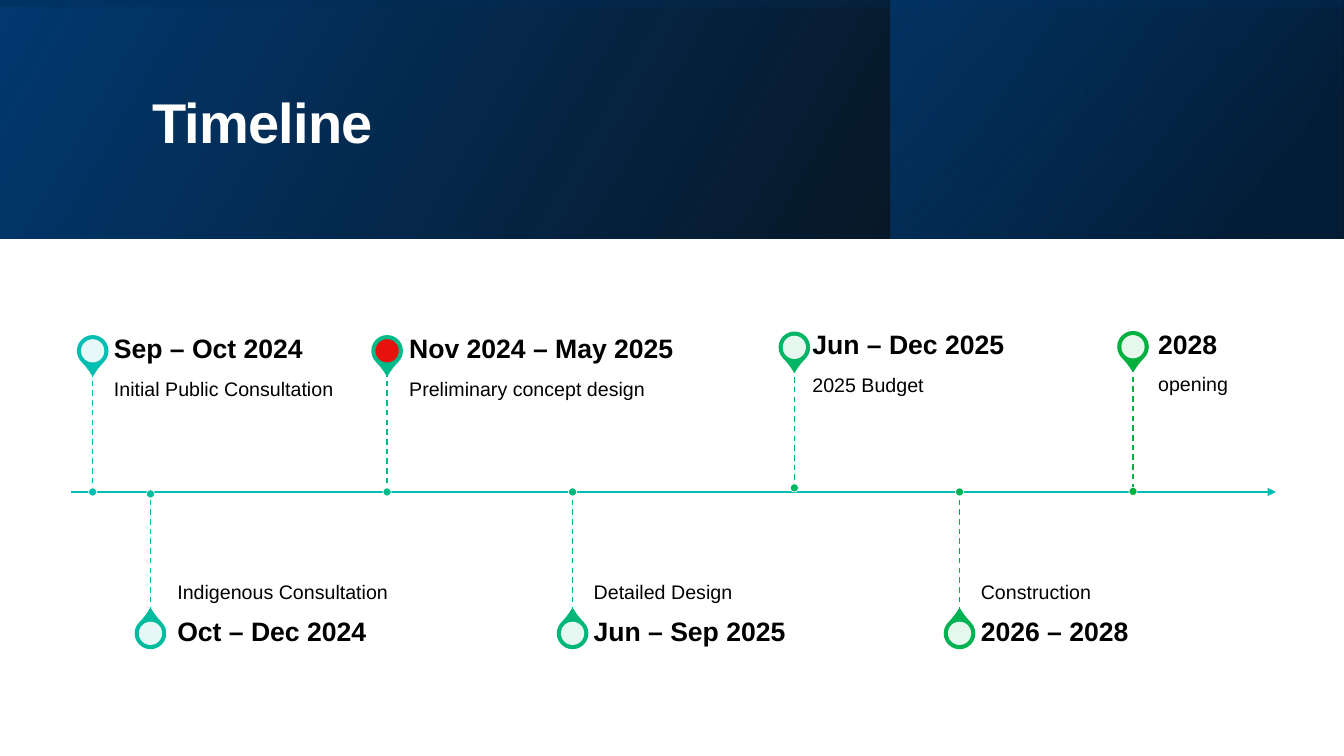
from lxml import etree
from pptx import Presentation
from pptx.dml.color import RGBColor
from pptx.enum.dml import MSO_LINE
from pptx.enum.shapes import MSO_CONNECTOR, MSO_SHAPE
from pptx.enum.text import MSO_ANCHOR
from pptx.oxml import parse_xml
from pptx.oxml.ns import nsdecls, qn
from pptx.util import Pt

WHITE = RGBColor(0xFF, 0xFF, 0xFF)
BLACK = RGBColor(0x00, 0x00, 0x00)
RED = RGBColor(0xFF, 0x00, 0x00)
NAVY = RGBColor(0x00, 0x39, 0x70)
DEEP_NAVY = RGBColor(0x00, 0x26, 0x4B)
MID_BLUE = RGBColor(0x00, 0x4C, 0x96)
TEAL = RGBColor(0x00, 0xBE, 0xB2)
SEA = RGBColor(0x00, 0xBC, 0x9E)
JADE = RGBColor(0x00, 0xBA, 0x8A)
MINT = RGBColor(0x00, 0xB7, 0x77)
EMERALD = RGBColor(0x00, 0xB5, 0x64)
LEAF = RGBColor(0x00, 0xB3, 0x52)
GREEN = RGBColor(0x00, 0xB1, 0x40)

SLIDE_W, SLIDE_H, HEADER_H = 960, 540, 170.6
AXIS_Y = 351.4
PIN, HOLE, DOT = 21.6, 16.6, 5.8
DATE_H, NOTE_H = 30.2, 86

# date, note, stem x, text x, text width, colour, hole, label shift, foot shift
ABOVE = [
    ("Sep – Oct 2024", "Initial Public Consultation", 66.2, 81.4, 172, TEAL, WHITE, 0, 0),
    ("Nov 2024 – May 2025", "Preliminary concept design", 276.5, 292.3, 240, JADE, RED, 0, 0),
    ("Jun – Dec 2025", "2025 Budget", 567.4, 580.3, 172, EMERALD, WHITE, -2.5, -2.9),
    ("2028", "opening", 809.3, 827.3, 66.2, GREEN, WHITE, -2.9, -0.4),
]
BELOW = [
    ("Oct – Dec 2024", "Indigenous Consultation", 107.5, 126.7, 172, SEA, WHITE, 0, 1.4),
    ("Jun – Sep 2025", "Detailed Design", 409, 424.1, 172, MINT, WHITE, 0, 0),
    ("2026 – 2028", "Construction", 685.4, 700.6, 172, LEAF, WHITE, 0, 0),
]


class TimelineSlide:
    font = "Arial"

    def __init__(self, slide):
        self.slide = slide
        self.shapes = slide.shapes

    def start_group(self):
        self.shapes = self.slide.shapes.add_group_shape().shapes

    def shape(self, kind, x, y, w, h, fill=None, line=None, line_w=1, alpha=None):
        sp = self.shapes.add_shape(kind, Pt(x), Pt(y), Pt(w), Pt(h))
        sp.shadow.inherit = False
        if fill is None:
            sp.fill.background()
        else:
            sp.fill.solid()
            sp.fill.fore_color.rgb = fill
        if alpha is not None:
            color = sp._element.spPr.find(".//" + qn("a:srgbClr"))
            etree.SubElement(color, qn("a:alpha")).set("val", str(alpha * 1000))
        if line is None:
            sp.line.fill.background()
        else:
            sp.line.color.rgb = line
            sp.line.width = Pt(line_w)
        return sp

    def gradient_band(self, x, y, w, h, stops, angle, rotation=0):
        """Mirrored rectangle; stops are (position %, colour, opacity %)."""
        sp = self.shape(MSO_SHAPE.RECTANGLE, x, y, w, h)
        sp.rotation = rotation
        spPr = sp._element.spPr
        spPr.find(qn("a:xfrm")).set("flipH", "1")
        gs = "".join(
            f'<a:gs pos="{pos * 1000}"><a:srgbClr val="{color}">'
            f'<a:alpha val="{alpha * 1000}"/></a:srgbClr></a:gs>'
            for pos, color, alpha in stops)
        grad = parse_xml(
            f'<a:gradFill {nsdecls("a")} rotWithShape="1"><a:gsLst>{gs}</a:gsLst>'
            f'<a:lin ang="{angle * 60000}" scaled="0"/></a:gradFill>')
        spPr.replace(spPr.find(qn("a:noFill")), grad)

    def dot(self, cx, cy, size, fill, line=None, line_w=0.5, alpha=None):
        self.shape(MSO_SHAPE.OVAL, cx - size / 2, cy - size / 2, size, size,
                   fill, line, line_w, alpha)

    def text(self, text, x, y, w, h, size, color=BLACK, bold=False,
             anchor=MSO_ANCHOR.MIDDLE, insets=(0, 0, 0, 0), spacing=None):
        """Insets run left, top, right, bottom."""
        tf = self.shapes.add_textbox(Pt(x), Pt(y), Pt(w), Pt(h)).text_frame
        tf.word_wrap = True
        tf.vertical_anchor = anchor
        (tf.margin_left, tf.margin_top,
         tf.margin_right, tf.margin_bottom) = [Pt(i) for i in insets]
        tf.text = text
        p = tf.paragraphs[0]
        p.line_spacing = 0.9
        r = p.runs[0]
        r.font.name, r.font.size, r.font.bold = self.font, Pt(size), bold
        r.font.color.rgb = color
        if spacing is not None:
            r._r.get_or_add_rPr().set("spc", str(int(spacing * 100)))

    def line(self, x1, y1, x2, y2, color, width=1, dashed=False, arrow=False):
        c = self.shapes.add_connector(MSO_CONNECTOR.STRAIGHT,
                                      Pt(x1), Pt(y1), Pt(x2), Pt(y2))
        c.line.color.rgb = color
        c.line.width = Pt(width)
        if dashed:
            c.line.dash_style = MSO_LINE.DASH
        spPr = c._element.spPr
        if arrow:
            etree.SubElement(spPr.find(qn("a:ln")), qn("a:tailEnd")).set("type", "triangle")
        etree.SubElement(spPr, qn("a:effectLst"))

    def milestone(self, date, note, stem_x, text_x, width, color, hole,
                  shift, foot_shift, above):
        foot_y = AXIS_Y + foot_shift
        if above:
            head_y, pin_y = 265 + shift, 250.6 + shift
            date_y, note_y = head_y - DATE_H, head_y
            rotation, anchor, insets = 135, MSO_ANCHOR.TOP, (0, 7.2, 7.2, 10.8)
        else:
            head_y, pin_y = 437.2 + shift, 452.4 + shift
            date_y, note_y = head_y, head_y - NOTE_H
            rotation, anchor, insets = 315, MSO_ANCHOR.BOTTOM, (0, 10.8, 0, 7.2)
        pin = self.shape(MSO_SHAPE.TEAR, stem_x - PIN / 2, pin_y - PIN / 2,
                         PIN, PIN, color, color)
        pin.adjustments[0] = 1.15
        pin.rotation = rotation
        self.dot(stem_x, pin_y, HOLE, hole, alpha=90)
        self.text(note, text_x, note_y, width, NOTE_H, 14, anchor=anchor, insets=insets)
        self.text(date, text_x, date_y, width, DATE_H, 19, bold=True, insets=(0, 0, 9.4, 0))
        self.line(stem_x, head_y, stem_x, foot_y, color, dashed=True)
        self.dot(stem_x, foot_y, DOT, color, WHITE)


def main():
    prs = Presentation()
    prs.slide_width, prs.slide_height = Pt(SLIDE_W), Pt(SLIDE_H)
    s = TimelineSlide(prs.slides.add_slide(prs.slide_layouts[6]))

    s.gradient_band(0, 0, SLIDE_W, HEADER_H, [(0, BLACK, 96), (100, NAVY, 100)], 330)
    s.gradient_band(636.5, 0, 322.8, HEADER_H,
                    [(19, DEEP_NAVY, 68), (100, MID_BLUE, 48)], 320)
    offset = (SLIDE_W - HEADER_H) / 2
    s.gradient_band(offset, -offset, HEADER_H, SLIDE_W,
                    [(23, NAVY, 16), (99, BLACK, 45)], 350, rotation=270)
    s.text("Timeline", 108.7, 27.4, 765.4, 123.8, 40, WHITE, bold=True, spacing=-0.5)

    s.start_group()
    s.line(50.4, AXIS_Y, 911.5, AXIS_Y, TEAL, 1.5, arrow=True)
    for row, above in ((ABOVE, True), (BELOW, False)):
        for item in row:
            s.milestone(*item, above=above)
    prs.save("out.pptx")


if __name__ == "__main__":
    main()
